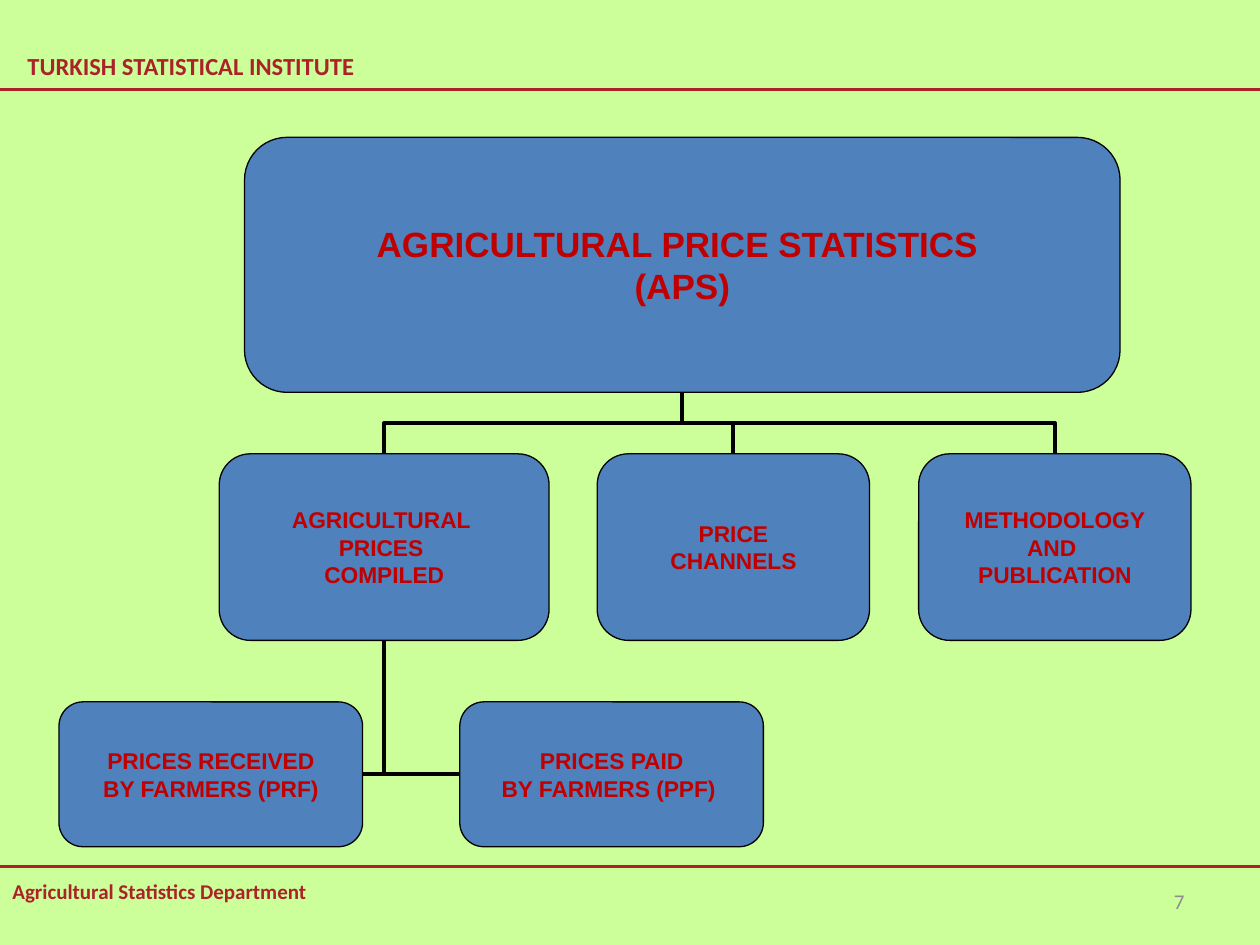
"""Build the agricultural price statistics organisation chart."""
from lxml.etree import SubElement
from pptx import Presentation
from pptx.dml.color import RGBColor
from pptx.enum.shapes import MSO_CONNECTOR as Link, MSO_SHAPE as Shape
from pptx.enum.text import MSO_ANCHOR as Anchor, PP_ALIGN as Align
from pptx.oxml.ns import qn
from pptx.util import Cm, Pt

WIDE, HIGH = 25.4, 19.05
RED, BLUE, BLACK = "AB2328", "4F81BD", "000000"
TITLE = "TURKISH STATISTICAL INSTITUTE"
FOOT = "Agricultural Statistics Department"
RULES = [1.8, 17.47]
ROW, BASE = (9.15, 3.76), (14.15, 2.92)
NODES = {
    "root": (4.93, 17.65, (2.77, 5.14), 20, "AGRICULTURAL PRICE STATISTICS \n(APS)"),
    "prices": (4.42, 6.65, ROW, 13, "AGRICULTURAL \nPRICES \nCOMPILED"),
    "method": (18.52, 5.49, ROW, 13, "METHODOLOGY\nAND \nPUBLICATION"),
    "channels": (12.04, 5.49, ROW, 13, "PRICE\nCHANNELS"),
    "received": (1.19, 6.12, BASE, 13, "PRICES RECEIVED\nBY FARMERS (PRF)"),
    "paid": (9.27, 6.12, BASE, 13, "PRICES PAID\nBY FARMERS (PPF) "),
}
BRANCHES = [("root", "prices"), ("root", "channels"), ("root", "method")]
SIDES = [("prices", "received"), ("prices", "paid")]


def color(code):
    return RGBColor.from_string(code)


def write(shape, text, size, code, font="Calibri", bold=True, align=Align.LEFT):
    frame = shape.text_frame
    frame.text = text
    for para in frame.paragraphs:
        para.alignment = align
        for run in para.runs:
            run.font.name, run.font.size, run.font.bold = font, Pt(size), bold
            run.font.color.rgb = color(code)
    return frame


def place(shape, *box):
    shape.left, shape.top, shape.width, shape.height = map(Cm, box)


def draw(slide, kind, ends, code, width):
    line = slide.shapes.add_connector(kind, *map(Cm, ends))
    line.line.color.rgb = color(code)
    line.line.width = Pt(width)
    SubElement(line._element.spPr, qn("a:effectLst"))
    return line


def bend(slide, start, end, preset):
    """Draw an elbow that leaves its start downwards."""
    (x1, y1), (x2, y2) = start, end
    mid_x, mid_y = (x1 + x2) / 2, (y1 + y2) / 2
    side = 1 if x2 < x1 else -1
    half, rise = side * (y2 - y1) / 2, abs(x2 - x1) / 2
    ends = mid_x - half, mid_y - rise, mid_x + half, mid_y + rise
    props = draw(slide, Link.ELBOW, ends, BLACK, 2.25)._element.spPr
    props.find(qn("a:xfrm")).set("rot", str((180 - 90 * side) * 60000))
    props.find(qn("a:prstGeom")).set("prst", preset)


def foot(name):
    left, width, (top, height), *_ = NODES[name]
    return left + width / 2, top + height


def main():
    deck = Presentation()
    deck.slide_width, deck.slide_height = Cm(WIDE), Cm(HIGH)
    slide = deck.slides.add_slide(deck.slide_layouts[5])
    slide.background.fill.solid()
    slide.background.fill.fore_color.rgb = color("CCFF99")

    title = slide.shapes.title
    place(title, 0.3, 0.82, 9, 1)
    write(title, TITLE, 14, RED).vertical_anchor = Anchor.MIDDLE
    for top in RULES:
        draw(slide, Link.STRAIGHT, (0, top, WIDE, top), RED, 1.5)
    label = slide.shapes.add_textbox(0, Cm(17.58), Cm(10.9), Cm(0.76))
    write(label, FOOT, 12, RED).word_wrap = True
    number = slide.shapes.add_textbox(Cm(18.2), Cm(17.66), Cm(5.93), Cm(1.01))
    frame = write(number, "7", 12, "8C8C8C", bold=False, align=Align.RIGHT)
    frame.word_wrap, frame.vertical_anchor = True, Anchor.MIDDLE

    for parent, child in SIDES:
        left, width, (top, height), *_ = NODES[child]
        start = foot(parent)
        edge = left + width if left < start[0] - width / 2 else left
        bend(slide, start, (edge, top + height / 2), "bentConnector2")
    for parent, child in BRANCHES:
        end = foot(child)[0], NODES[child][2][0]
        bend(slide, foot(parent), end, "bentConnector3")

    for left, width, (top, height), size, text in NODES.values():
        box = slide.shapes.add_shape(
            Shape.ROUNDED_RECTANGLE, *map(Cm, (left, top, width, height)))
        box.shadow.inherit = False
        box.fill.solid()
        box.fill.fore_color.rgb = color(BLUE)
        box.line.color.rgb = color(BLACK)
        box.line.width = Pt(0.75)
        frame = write(box, text, size, "C00000", "Arial", align=Align.CENTER)
        frame.word_wrap, frame.vertical_anchor = False, Anchor.MIDDLE
        frame.margin_left = frame.margin_right = Cm(0.08)
        frame.margin_top = frame.margin_bottom = Cm(0.03)

    deck.save("out.pptx")


if __name__ == "__main__":
    main()
